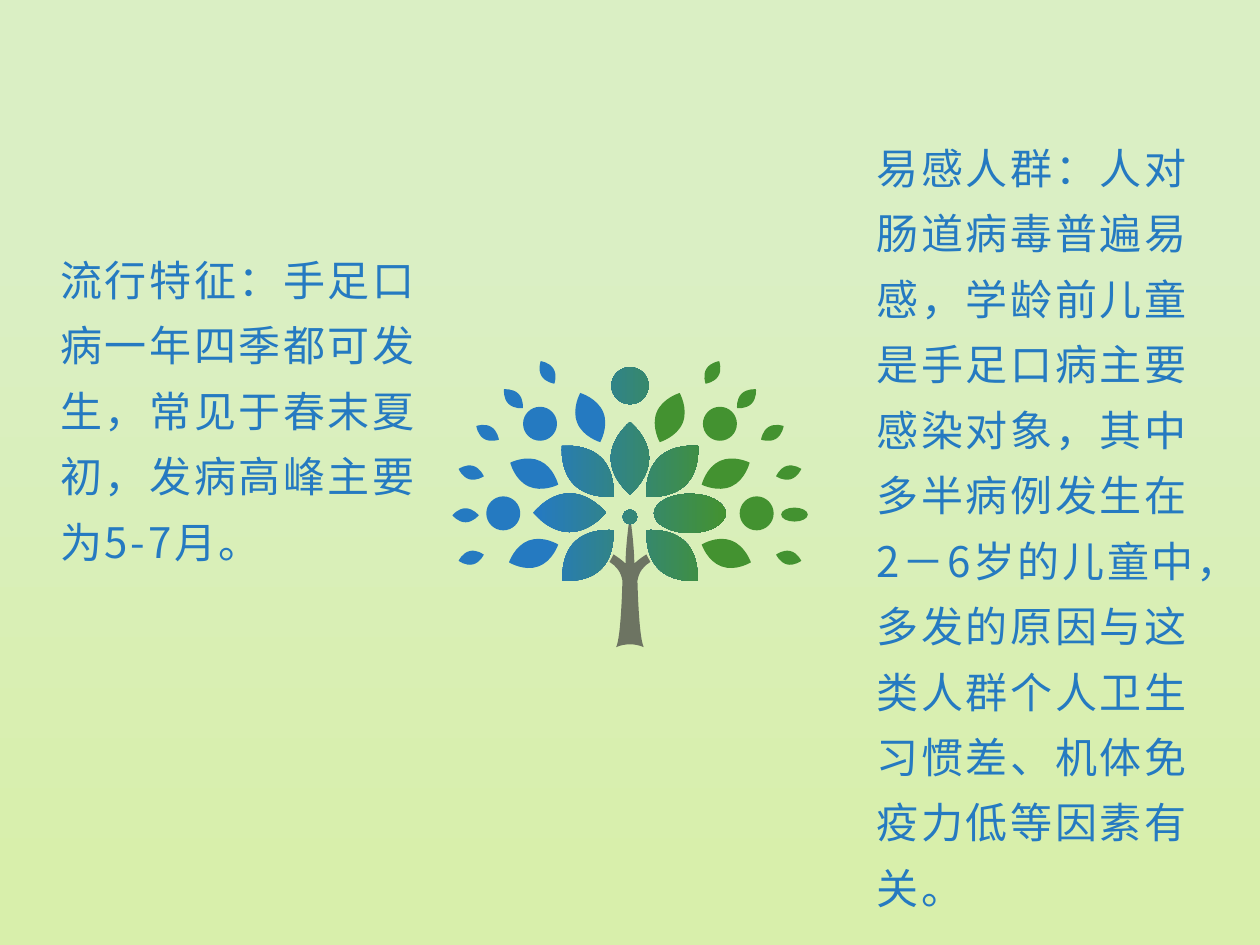
from dataclasses import dataclass

from lxml import etree
from pptx import Presentation
from pptx import util as u
from pptx.dml.color import RGBColor
from pptx.enum import text
from pptx.oxml.ns import qn

Point = tuple[float, float]
Contour = list[Point]  # a start point, then three points for each cubic curve


@dataclass(frozen=True)
class Theme:
    blue: str = "257AC1"
    green: str = "439230"
    trunk: str = "404040"
    trunk_opacity: int = 70
    sky: tuple = ((0.25, "DAEFC4"), (0.94, "D8EFAB"))
    font: str = "Noto Sans CJK SC"
    body_size: float = 24
    letter_spacing: float = 1.5
    line_spacing: float = 1.3


@dataclass(frozen=True)
class Leaf:
    """A pointed leaf from tip to tip; x is measured from the trunk axis."""
    x1: float
    y1: float
    x2: float
    y2: float

    def contour(self) -> Contour:
        middle_x, middle_y = (self.x1 + self.x2) / 2, (self.y1 + self.y2) / 2
        half_x, half_y = (self.x2 - self.x1) / 2, (self.y2 - self.y1) / 2
        return [(middle_x + along * half_x - across * half_y,
                 middle_y + along * half_y + across * half_x)
                for along, across in LEAF_OUTLINE]


@dataclass(frozen=True)
class Oval:
    x: float
    y: float
    radius_x: float
    radius_y: float

    def contour(self) -> Contour:
        return [(self.x + self.radius_x * across, self.y + self.radius_y * down)
                for across, down in OVAL_OUTLINE]


@dataclass(frozen=True)
class Passage:
    wording: str
    left: float
    top: float
    width: float
    height: float


THEME = Theme()
TRUNK_AXIS = 360
WIDE, BEND, ROUND = 0.53, 0.58, 0.55

# Unit outlines of the crown parts
LEAF_OUTLINE = [
    (-1, 0), (-1, 0), (-BEND, WIDE), (0, WIDE), (BEND, WIDE), (1, 0), (1, 0),
    (1, 0), (BEND, -WIDE), (0, -WIDE), (-BEND, -WIDE), (-1, 0), (-1, 0),
]
OVAL_OUTLINE = [
    (1, 0), (1, ROUND), (ROUND, 1), (0, 1), (-ROUND, 1), (-1, ROUND), (-1, 0),
    (-1, -ROUND), (-ROUND, -1), (0, -1), (ROUND, -1), (1, -ROUND), (1, 0),
]

# Crown parts on the right of the trunk; the left side mirrors them
OUTER_PARTS = [
    Leaf(83.5, 317, 97.9, 320.5), Leaf(41, 311.2, 69.1, 321.4),
    Leaf(97.9, 268, 83.5, 272.2), Leaf(68.4, 264.4, 41, 277),
    Leaf(87.8, 243.5, 74.9, 251.3), Leaf(28.4, 224.6, 17, 252.7),
    Leaf(72, 222.5, 61.2, 233.3), Leaf(51, 206.4, 43.2, 219.3),
    Oval(72.4, 293.4, 9.7, 9.7), Oval(51.4, 242.2, 9.7, 9.7),
]
RIGHT_TIP = Oval(94, 294.1, 7.6, 4)
LEFT_TIP = Leaf(101.5, 294.5, 86.4, 294.5)
INNER_PETALS = [Leaf(38.5, 331.9, 9.6, 303), Leaf(38.9, 254.9, 9.4, 283.7)]
LEFT_PETAL = Leaf(55.4, 293, 13.7, 293)
CENTRE_PARTS = [
    Leaf(0, 241.2, 0, 282.5), Oval(34.2, 293.4, 20.5, 11.2),
    Oval(0, 220.4, 10.6, 10.6), Oval(0, 295.4, 4.1, 4.1),
]
# Right half of the trunk, from the top down
TRUNK_HALF = [
    (0.6, 298.8),
    (2.6, 314), (2.5, 322), (2.5, 322),
    (5, 319.7), (7.2, 318.2), (9.4, 316.8),
    (10.1, 318.2), (10.8, 319.7), (11.7, 321.1),
    (7.9, 323.3), (5, 326.9), (4.3, 331.9),
    (4.3, 331.9), (5, 364.3), (7.9, 369.8),
    (5.2, 368.6), (2.6, 368.2), (0, 368.2),
]
PASSAGES = [
    Passage("易感人群：人对肠道病毒普遍易感，学龄前儿童是手足口病主要感染对象，"
            "其中多半病例发生在2－6岁的儿童中，多发的原因与这类人群个人卫生习惯差、"
            "机体免疫力低等因素有关。", 493.9, 69.1, 199.4, 458.6),
    Passage("流行特征：手足口病一年四季都可发生，常见于春末夏初，"
            "发病高峰主要为5-7月。", 27.4, 133.2, 225.4, 322.6),
]


def contours(parts: list) -> list[Contour]:
    return [part.contour() for part in parts]


def mirrored(outlines: list[Contour]) -> list[Contour]:
    return [[(-x, y) for x, y in outline] for outline in outlines]


def add_outline(slide, outlines: list[Contour]):
    placed = [[(u.Pt(TRUNK_AXIS + x), u.Pt(y)) for x, y in outline]
              for outline in outlines]
    builder = slide.shapes.build_freeform(*placed[0][0])
    for index, outline in enumerate(placed):
        if index:
            builder.move_to(*outline[0])
        builder.add_line_segments(outline[1:], close=True)
    shape = builder.convert_to_shape()
    # Join each three line segments into one cubic curve
    lines = list(shape._element.iter(qn("a:lnTo")))
    for start in range(0, len(lines), 3):
        curve = etree.Element(qn("a:cubicBezTo"))
        lines[start].addprevious(curve)
        for line in lines[start:start + 3]:
            curve.append(line[0])
            line.getparent().remove(line)
    shape.shadow.inherit = False
    shape.line.fill.background()
    return shape


def fill_solid(shape, color: str) -> None:
    shape.fill.solid()
    shape.fill.fore_color.rgb = RGBColor.from_string(color)


def fill_gradient(fill, stops: tuple, angle: float) -> None:
    fill.gradient()
    fill.gradient_angle = angle
    for stop, (position, color) in zip(fill.gradient_stops, stops):
        stop.position = position
        stop.color.rgb = RGBColor.from_string(color)


def add_passage(slide, passage: Passage) -> None:
    bounds = (passage.left, passage.top, passage.width, passage.height)
    frame = slide.shapes.add_textbox(*map(u.Pt, bounds)).text_frame
    paragraph = frame.paragraphs[0]
    run = paragraph.add_run()
    run.text = passage.wording
    formats = (
        (frame, {"word_wrap": True, "vertical_anchor": text.MSO_ANCHOR.TOP}),
        (paragraph, {"line_spacing": THEME.line_spacing}),
        (run.font, {"size": u.Pt(THEME.body_size), "name": THEME.font}),
        (run.font.color, {"rgb": RGBColor.from_string(THEME.blue)}),
    )
    for target, values in formats:
        for name, value in values.items():
            setattr(target, name, value)
    # Letter spacing and the East Asian typeface
    properties = run._r.get_or_add_rPr()
    properties.set("spc", str(int(THEME.letter_spacing * 100)))
    etree.SubElement(properties, qn("a:ea"), typeface=THEME.font)


def add_tree(slide) -> None:
    # Trunk
    left_half = mirrored([TRUNK_HALF])[0][::-1]
    trunk = add_outline(slide, [TRUNK_HALF + left_half[1:]])
    fill_solid(trunk, THEME.trunk)
    color = trunk._element.spPr.find(qn("a:solidFill"))[0]
    etree.SubElement(color, qn("a:alpha"), val=str(THEME.trunk_opacity * 1000))
    # Outer crown, right and left
    outer = contours(OUTER_PARTS)
    fill_solid(add_outline(slide, outer + contours([RIGHT_TIP])), THEME.green)
    fill_solid(add_outline(slide, mirrored(outer + contours([LEFT_TIP]))), THEME.blue)
    # Inner crown
    petals = contours(INNER_PETALS)
    left_petals = mirrored(petals + contours([LEFT_PETAL]))
    crown = add_outline(slide, petals + left_petals + contours(CENTRE_PARTS))
    fill_gradient(crown.fill, ((0.02, THEME.blue), (1, THEME.green)), 0)


def main() -> None:
    presentation = Presentation()
    presentation.slide_width, presentation.slide_height = u.Pt(720), u.Pt(540)
    slide = presentation.slides.add_slide(presentation.slide_layouts[6])
    fill_gradient(slide.background.fill, THEME.sky, 270)
    add_tree(slide)
    for passage in PASSAGES:
        add_passage(slide, passage)
    presentation.save("out.pptx")


if __name__ == "__main__":
    main()
